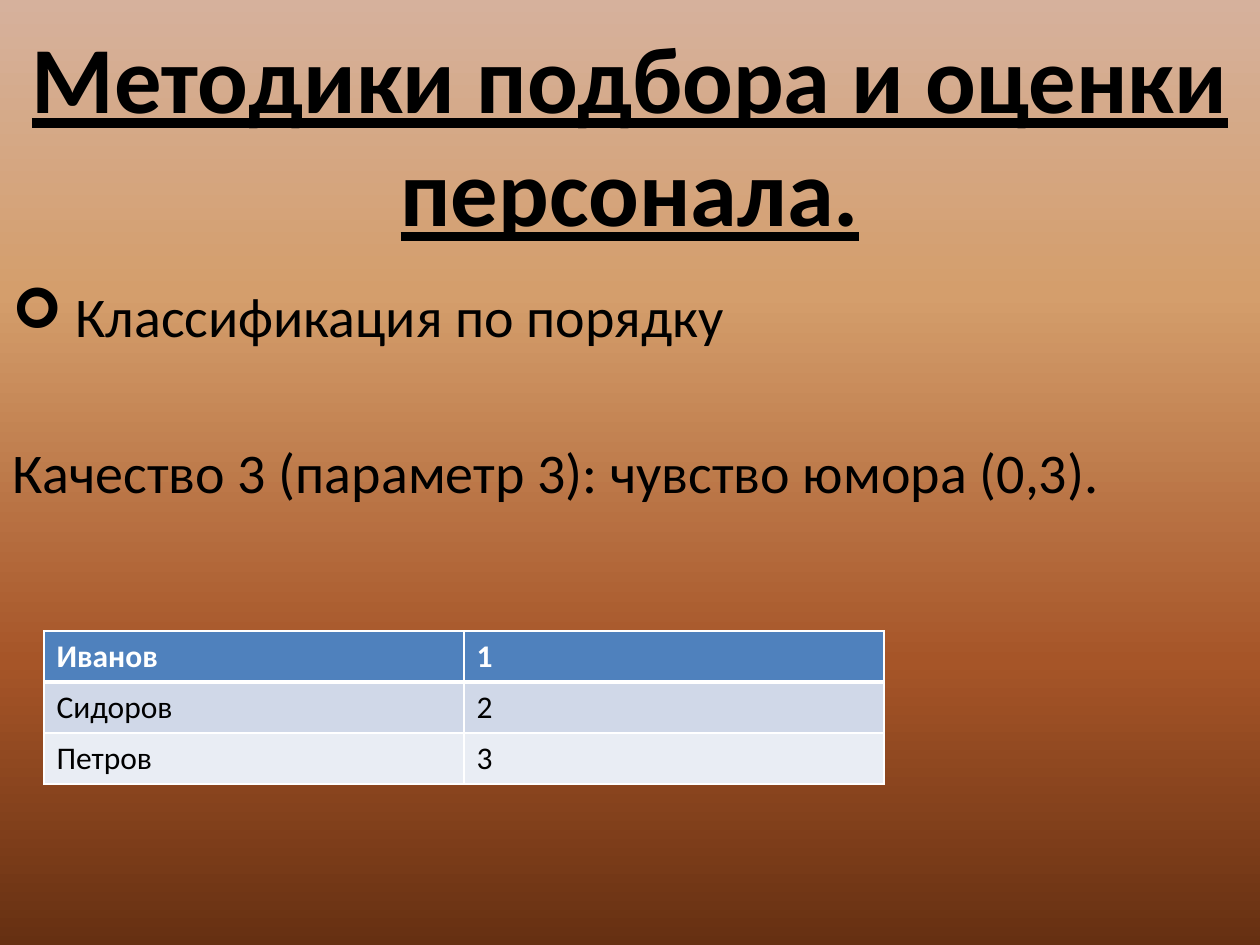
from lxml import etree
from pptx import Presentation, util as u
from pptx.dml.color import RGBColor
from pptx.enum import text
from pptx.oxml import ns


def px(n):
    return u.Emu(round(n * 914400 / 126))


def rgb(color):
    return RGBColor.from_string(color)


def add(parent, tag, **attrs):
    return etree.SubElement(parent, ns.qn(tag), attrs)


class Deck:
    font = "Calibri"
    ink = "000000"
    white = "FFFFFF"
    header = "4F81BD"
    bands = ("D0D8E8", "E9EDF4")

    def __init__(self, width, height):
        self.prs = Presentation()
        self.prs.slide_width, self.prs.slide_height = px(width), px(height)
        self.s = self.prs.slides.add_slide(self.prs.slide_layouts[6])

    def background(self, stops):
        fill = self.s.background.fill
        fill.gradient()
        fill.gradient_angle = 270
        stop_list = self.s._element.find(".//" + ns.qn("a:gsLst"))
        for stop in list(stop_list):
            stop_list.remove(stop)
        for percent, color in stops:
            stop = add(stop_list, "a:gs", pos=str(percent * 1000))
            add(stop, "a:srgbClr", val=color)

    def run(self, p, words, size, color=None, bold=False, underline=False):
        r = p.add_run()
        r.text = words
        r.font.name, r.font.size = self.font, u.Pt(size)
        r.font.bold, r.font.underline = bold, underline
        r.font.color.rgb = rgb(color or self.ink)

    def box(self, x, y, w, h, anchor=text.MSO_ANCHOR.TOP):
        tf = self.s.shapes.add_textbox(px(x), px(y), px(w), px(h)).text_frame
        tf.word_wrap = True
        tf.vertical_anchor = anchor
        return tf

    def title(self, words, x, y, w, h):
        p = self.box(x, y, w, h, text.MSO_ANCHOR.MIDDLE).paragraphs[0]
        p.alignment = text.PP_ALIGN.CENTER
        self.run(p, words, 54, bold=True, underline=True)

    def body(self, items, x, y, w, h):
        tf = self.box(x, y, w, h)
        for i, (words, bullet, before) in enumerate(items):
            p = tf.add_paragraph() if i else tf.paragraphs[0]
            p.space_before = u.Pt(before)
            if bullet:
                pPr = p._p.get_or_add_pPr()
                pPr.set("marL", str(px(63)))
                pPr.set("indent", str(-px(63)))
                add(pPr, "a:buFont", typeface="Wingdings")
                add(pPr, "a:buChar", char=bullet)
            self.run(p, words, 32)

    def border(self, cell, side, width):
        ln = add(cell._tc.get_or_add_tcPr(), "a:ln" + side, w=str(u.Pt(width)))
        add(add(ln, "a:solidFill"), "a:srgbClr", val=self.white)

    def table(self, rows, x, y, col_w, row_h):
        cols = len(rows[0])
        table = self.s.shapes.add_table(
            len(rows), cols, px(x), px(y), px(col_w * cols), px(row_h * len(rows))
        ).table
        for i, row in enumerate(rows):
            table.rows[i].height = px(row_h)
            head = i == 0
            for j, words in enumerate(row):
                cell = table.cell(i, j)
                for side in "LRTB":
                    thick = (head and side == "B") or (i == 1 and side == "T")
                    self.border(cell, side, 3 if thick else 1)
                cell.fill.solid()
                cell.fill.fore_color.rgb = rgb(
                    self.header if head else self.bands[(i - 1) % 2])
                self.run(cell.text_frame.paragraphs[0], words, 18,
                         self.white if head else self.ink, bold=head)


def main():
    deck = Deck(1260, 945)
    deck.background([(0, "D6B19C"), (31, "D49E6C"), (70, "A65528"), (100, "663012")])
    deck.title("Методики подбора и оценки персонала.", 0, 0, 1260, 265)
    deck.body([
        ("Классификация по порядку", "➢", 6.4),
        ("Качество 3 (параметр 3): чувство юмора (0,3).", None, 51),
    ], 0, 275, 1260, 670)
    deck.table([("Иванов", "1"), ("Сидоров", "2"), ("Петров", "3")], 44, 631, 420, 51)
    deck.prs.save("out.pptx")


if __name__ == "__main__":
    main()
